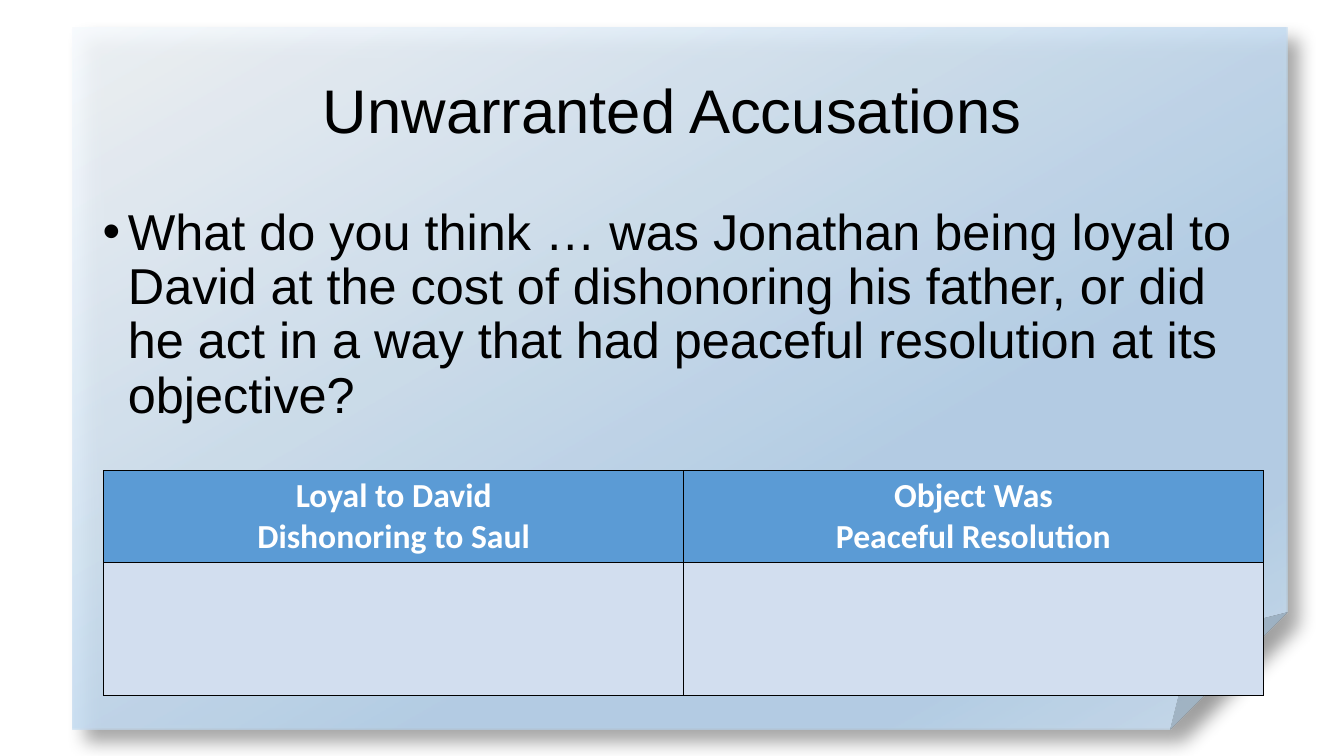
from pptx import Presentation
from pptx.dml.color import RGBColor
from pptx.enum.shapes import MSO_SHAPE
from pptx.enum.text import MSO_ANCHOR, PP_ALIGN
from pptx.oxml import parse_xml
from pptx.oxml.ns import nsdecls, qn
from pptx.util import Inches, Pt

FOLDED_CORNER = MSO_SHAPE.FOLDED_CORNER
CENTER, LEFT = PP_ALIGN.CENTER, PP_ALIGN.LEFT
TOP, MIDDLE = MSO_ANCHOR.TOP, MSO_ANCHOR.MIDDLE
NS = nsdecls("a")

COLORS = {
    "text": "000000",
    "white": "FFFFFF",
    "header": "5B9BD5",
    "answer": "D2DEEF",
    "border": "000000",
    "shadow": "000000",
    "paper_light": "F7FAFD",
    "paper_mid": "B5D2EC",
    "paper_end": "CEE1F2",
}
PAPER_STOPS = [(0, "paper_light"), (64, "paper_mid"), (83, "paper_mid"), (100, "paper_end")]
QUESTION = ("What do you think … was Jonathan being loyal to David at the cost of "
            "dishonoring his father, or did he act in a way that had peaceful "
            "resolution at its objective?")
HEADINGS = [("Loyal to David", "Dishonoring to Saul"),
            ("Object Was", "Peaceful Resolution")]


def rgb(name):
    return RGBColor.from_string(COLORS[name])


def add_span(para, text, size, font, color, bold=False):
    span = para.add_run()
    span.text = text
    span.font.size = Pt(size)
    span.font.name = font
    span.font.bold = bold
    span.font.color.rgb = rgb(color)


def add_paper(page, left, top, width, height):
    paper = page.shapes.add_shape(FOLDED_CORNER, Inches(left), Inches(top),
                                  Inches(width), Inches(height))
    paper.line.fill.background()
    paper.shadow.inherit = False
    properties = paper._element.spPr
    # Translucent gradient
    stops = "".join(
        f'<a:gs pos="{pos * 1000}"><a:srgbClr val="{COLORS[name]}">'
        f'<a:alpha val="87000"/></a:srgbClr></a:gs>' for pos, name in PAPER_STOPS)
    properties.find(qn("a:prstGeom")).addnext(parse_xml(
        f'<a:gradFill {NS} rotWithShape="1"><a:gsLst>{stops}</a:gsLst>'
        f'<a:lin ang="3600000" scaled="0"/></a:gradFill>'))
    # Soft shadow to the lower right
    properties.find(qn("a:effectLst")).append(parse_xml(
        f'<a:outerShdw {NS} blurRad="{Pt(13)}" dist="{Pt(13)}" dir="2700000" '
        f'algn="tl" rotWithShape="0"><a:srgbClr val="{COLORS["shadow"]}">'
        f'<a:alpha val="40000"/></a:srgbClr></a:outerShdw>'))


def add_text(page, place, text, size, align=LEFT, anchor=TOP, bullet=False):
    box = page.shapes.add_textbox(*[Inches(length) for length in place])
    frame = box.text_frame
    frame.word_wrap = True
    frame.vertical_anchor = anchor
    para = frame.paragraphs[0]
    para.alignment = align
    para.line_spacing = 0.9
    if bullet:
        settings = para._p.get_or_add_pPr()
        settings.set("marL", str(Inches(0.25)))
        settings.set("indent", str(Inches(-0.25)))
        settings.append(parse_xml(f'<a:buFont {NS} typeface="Arial"/>'))
        settings.append(parse_xml(f'<a:buChar {NS} char="•"/>'))
    add_span(para, text, size, "Arial", "text")


def style_cell(cell, color):
    settings = cell._tc.get_or_add_tcPr()
    for side in ("lnL", "lnR", "lnT", "lnB"):
        settings.append(parse_xml(
            f'<a:{side} {NS} w="{Pt(1)}"><a:solidFill>'
            f'<a:srgbClr val="{COLORS["border"]}"/></a:solidFill></a:{side}>'))
    cell.fill.solid()
    cell.fill.fore_color.rgb = rgb(color)


def add_answer_table(page, left, top, column_width, row_heights):
    columns = len(HEADINGS)
    table = page.shapes.add_table(
        len(row_heights), columns, Inches(left), Inches(top),
        Inches(column_width * columns), Inches(sum(row_heights))).table
    for row, height in zip(table.rows, row_heights):
        row.height = Inches(height)
    for index, (first, second) in enumerate(HEADINGS):
        table.columns[index].width = Inches(column_width)
        heading = table.cell(0, index)
        style_cell(heading, "header")
        style_cell(table.cell(1, index), "answer")
        para = heading.text_frame.paragraphs[0]
        para.alignment = CENTER
        add_span(para, first, 24, "Calibri", "white", bold=True)
        para.add_line_break()
        add_span(para, second, 24, "Calibri", "white", bold=True)


def main():
    deck = Presentation()
    deck.slide_width, deck.slide_height = Inches(13.33), Inches(7.5)
    page = deck.slides.add_slide(deck.slide_layouts[6])
    # Background sheet
    add_paper(page, 0.72, 0.27, 12.05, 6.97)
    # Title and question
    add_text(page, (0.92, 0.4, 11.5, 1.45), "Unwarranted Accusations", 44, CENTER, MIDDLE)
    add_text(page, (0.92, 2, 11.5, 4.76), QUESTION, 36, bullet=True)
    # Two views to compare
    add_answer_table(page, 1.03, 4.67, 5.75, [0.91, 1.32])
    deck.save("out.pptx")


if __name__ == "__main__":
    main()
